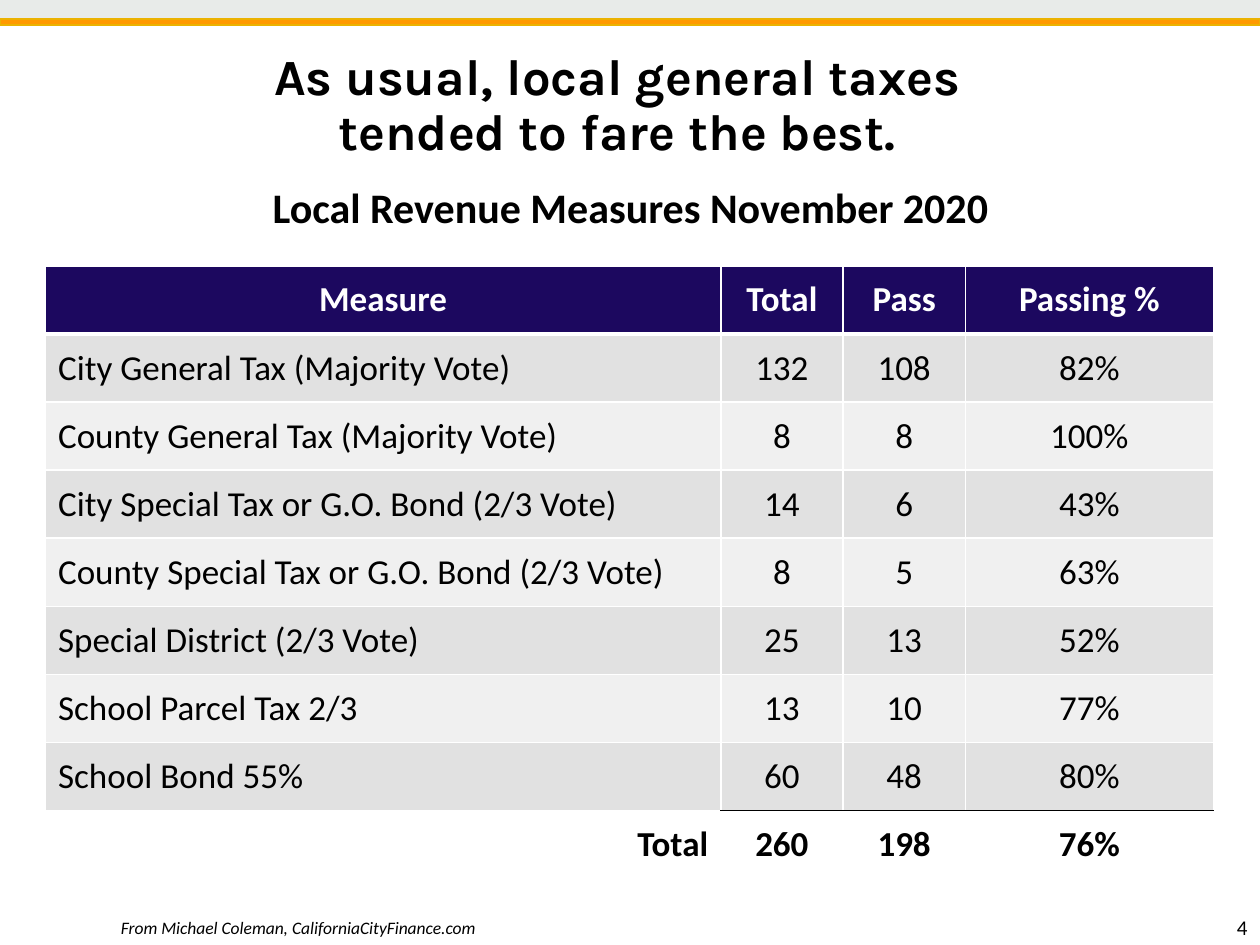
from lxml.etree import SubElement
from pptx import Presentation
from pptx.dml.color import RGBColor
from pptx.enum.shapes import MSO_SHAPE as Shape
from pptx.enum.text import MSO_ANCHOR as Anchor, PP_ALIGN as Align
from pptx.oxml.ns import qn
from pptx.util import Pt

TITLE = "As usual, local general taxes tended to fare the best."
SUBTITLE = "Local Revenue Measures November 2020"
SOURCE = "From Michael Coleman, CaliforniaCityFinance.com"
PAGE_NUMBER = "4"
ROWS = [
    ("Measure", "Total", "Pass", "Passing %"),
    ("City General Tax (Majority Vote)", "132", "108", "82%"),
    ("County General Tax (Majority Vote)", "8", "8", "100%"),
    ("City Special Tax or G.O. Bond (2/3 Vote)", "14", "6", "43%"),
    ("County Special Tax or G.O. Bond (2/3 Vote)", "8", "5", "63%"),
    ("Special District (2/3 Vote)", "25", "13", "52%"),
    ("School Parcel Tax 2/3", "13", "10", "77%"),
    ("School Bond 55%", "60", "48", "80%"),
    ("Total", "260", "198", "76%"),
]
COLUMN_WIDTHS = (385.9, 69.9, 69.9, 141.8)
ROW_HEIGHT = 38.9
TABLE_LEFT, TABLE_TOP = 26, 152

THEME = {
    "black": "000000", "white": "FFFFFF", "navy": "1C085F",
    "bands": ("F0F0F0", "E1E1E1"),
    "strip": "E8EBE9", "orange": "FF9900", "gold": "EBB201",
    "title": {"name": "Karla", "size": Pt(29), "bold": True},
    "subtitle": {"name": "Calibri", "size": Pt(24), "bold": True},
    "cell": {"name": "Calibri", "size": Pt(20), "bold": False},
    "source": {"name": "Calibri", "size": Pt(10), "italic": True},
    "number": {"name": "Calibri", "size": Pt(12)},
}


def set_values(target, values):
    for name, value in values.items():
        setattr(target, name, value)


def write(frame, text, font, align, color=THEME["black"], **paragraph_format):
    paragraph = frame.paragraphs[0]
    set_values(paragraph, {"alignment": align, **paragraph_format})
    run = paragraph.add_run()
    run.text = text
    set_values(run.font, font)
    run.font.color.rgb = RGBColor.from_string(color)


def add_text(slide, box, text, style, align, frame_format=None, **paragraph_format):
    frame = slide.shapes.add_textbox(*map(Pt, box)).text_frame
    set_values(frame, {"word_wrap": True, **(frame_format or {})})
    write(frame, text, THEME[style], align, **paragraph_format)


def add_bar(slide, top, height, fill, line=None):
    bar = slide.shapes.add_shape(Shape.RECTANGLE, 0, Pt(top), Pt(720), Pt(height))
    bar.shadow.inherit = False
    bar.fill.solid()
    bar.fill.fore_color.rgb = RGBColor.from_string(fill)
    if line:
        bar.line.color.rgb = RGBColor.from_string(line)
        bar.line.width = Pt(1)
    else:
        bar.line.fill.background()


def set_borders(cell, borders):
    """Draw borders given as {side: (color, width)}, ahead of the cell fill."""
    properties = cell._tc.get_or_add_tcPr()
    for index, side in enumerate("LRTB"):
        color, width = borders[side]
        line = SubElement(properties, qn(f"a:ln{side}"), w=str(Pt(width)))
        fill = SubElement(line, qn("a:solidFill"))
        SubElement(fill, qn("a:srgbClr"), val=color)
        properties.insert(index, line)


def format_cell(cell, text, row, column):
    last = len(ROWS) - 1
    is_header, is_total = row == 0, row == last
    set_values(cell, {"vertical_anchor": Anchor.MIDDLE} | {
        f"margin_{side}": Pt(7.2) for side in ("left", "right", "top", "bottom")})

    borders = dict.fromkeys("LRTB", (THEME["white"], 1))
    if row <= 1:
        borders["B" if is_header else "T"] = (THEME["white"], 3)
    if column and row >= last - 1:
        borders["T" if is_total else "B"] = (THEME["black"], 1)
    set_borders(cell, borders)

    if is_total:
        cell.fill.background()
    else:
        cell.fill.solid()
        fill = THEME["navy"] if is_header else THEME["bands"][row % 2]
        cell.fill.fore_color.rgb = RGBColor.from_string(fill)

    align = Align.CENTER
    if column == 0 and not is_header:
        align = Align.RIGHT if is_total else Align.LEFT
    write(cell.text_frame, text, THEME["cell"] | {"bold": is_header or is_total},
          align, THEME["white" if is_header else "black"])


def add_measures_table(slide):
    table = slide.shapes.add_table(
        len(ROWS), len(COLUMN_WIDTHS), Pt(TABLE_LEFT), Pt(TABLE_TOP),
        Pt(sum(COLUMN_WIDTHS)), Pt(ROW_HEIGHT * len(ROWS))).table
    table.horz_banding = False
    for column, width in zip(table.columns, COLUMN_WIDTHS):
        column.width = Pt(width)
    for row_index, values in enumerate(ROWS):
        table.rows[row_index].height = Pt(ROW_HEIGHT)
        for column_index, text in enumerate(values):
            format_cell(table.cell(row_index, column_index), text,
                        row_index, column_index)


def main():
    presentation = Presentation()
    set_values(presentation, {"slide_width": Pt(720), "slide_height": Pt(540)})
    slide = presentation.slides.add_slide(presentation.slide_layouts[6])

    add_bar(slide, 0, 14.4, THEME["strip"])
    add_bar(slide, 10.8, 3.6, THEME["orange"], THEME["gold"])
    add_text(slide, (613.4, 519, 106.6, 21.6), PAGE_NUMBER, "number", Align.RIGHT)
    add_text(slide, (101.5, 26, 502.6, 90), TITLE, "title", Align.CENTER,
             line_spacing=0.9)
    add_text(slide, (62, 496.8, 638, 43.2), SOURCE, "source", Align.LEFT,
             {"vertical_anchor": Anchor.BOTTOM, "margin_left": Pt(7.2)},
             line_spacing=0.9)
    add_measures_table(slide)
    add_text(slide, (54.7, 100, 611.3, 36), SUBTITLE, "subtitle", Align.CENTER)

    presentation.save("out.pptx")


if __name__ == "__main__":
    main()
